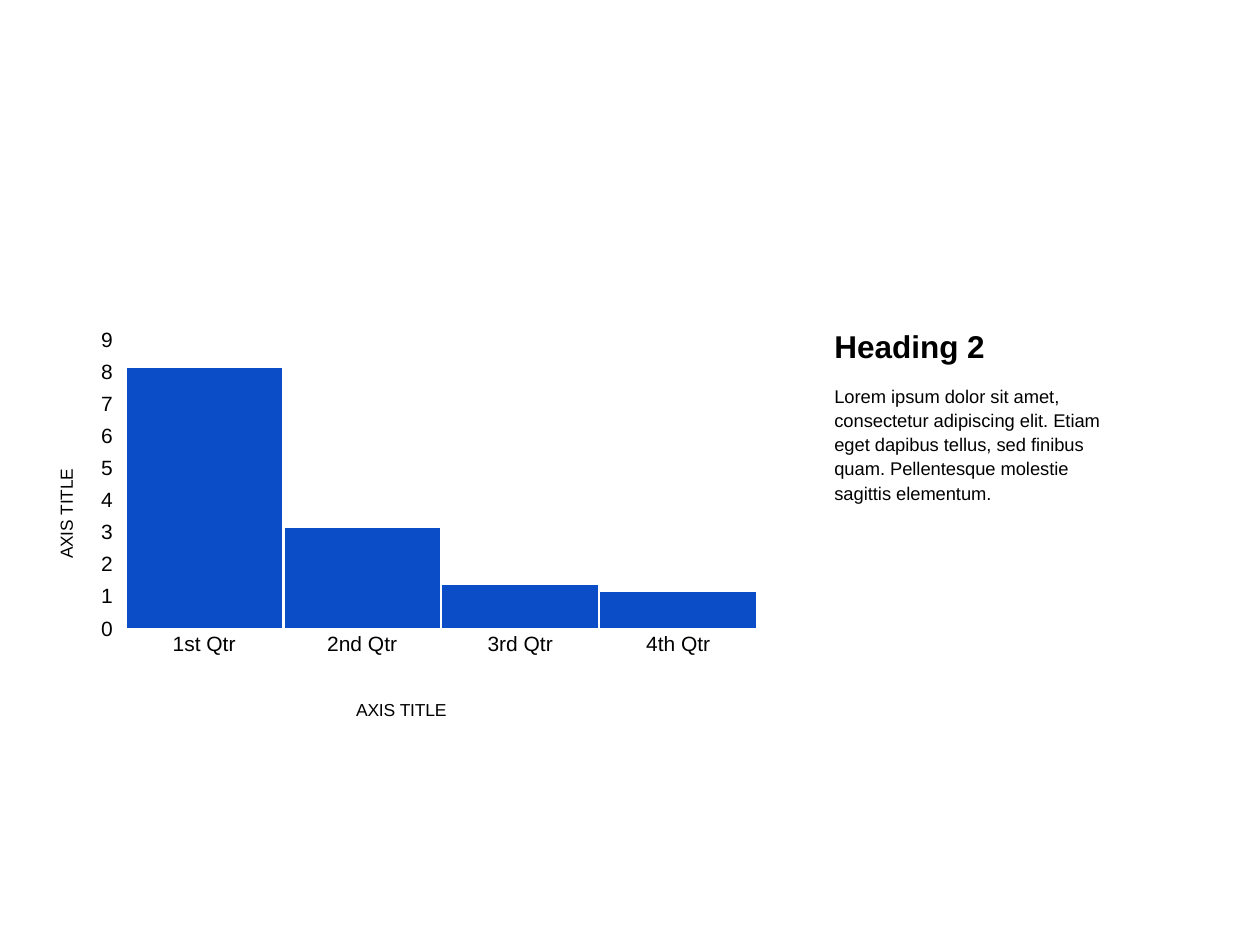
from lxml import etree
from pptx import Presentation
from pptx.chart.data import CategoryChartData
from pptx.dml.color import RGBColor
from pptx.enum.chart import XL_CHART_TYPE, XL_TICK_MARK
from pptx.oxml.ns import qn
from pptx.util import Emu, Pt

PX = 914400 // 126
FONT = "Arial"
BLACK = RGBColor(0x00, 0x00, 0x00)
WHITE = RGBColor(0xFF, 0xFF, 0xFF)
BLUE = RGBColor(0x0B, 0x4D, 0xC7)
GRAY = RGBColor(0xD9, 0xD9, 0xD9)
COLUMN = XL_CHART_TYPE.COLUMN_CLUSTERED
NO_TICK = XL_TICK_MARK.NONE
OUTSIDE = XL_TICK_MARK.OUTSIDE
QUARTERS = ["1st Qtr", "2nd Qtr", "3rd Qtr", "4th Qtr"]
VALUES = [8.2, 3.2, 1.4, 1.2]
BODY = ("Lorem ipsum dolor sit amet, consectetur adipiscing elit. Etiam eget dapibus "
        "tellus, sed finibus quam. Pellentesque molestie sagittis elementum.")


def px(*lengths):
    """Turn pixel lengths into EMU."""
    return [Emu(n * PX) for n in lengths]


def set_font(font, size, bold=False):
    """Apply the common typeface and colour."""
    font.name = FONT
    font.size = Pt(size)
    font.bold = bold
    font.color.rgb = BLACK


def add_text(p, text, size=10, bold=False, line=None, before=None):
    """Write one formatted run into a paragraph."""
    p.line_spacing = line
    if before is not None:
        p.space_before = Pt(before)
    r = p.add_run()
    r.text = text
    set_font(r.font, size, bold)


def set_layout(parent, x, y, w=None, h=None):
    """Place a chart part by fractions of the chart area."""
    layout = parent.get_or_add_layout() if hasattr(parent, "get_or_add_layout") else parent.find(qn("c:layout"))
    if layout is None:
        layout = etree.Element(qn("c:layout"))
        text = parent.find(qn("c:tx"))
        parent.insert(0 if text is None else 1, layout)
    for child in list(layout):
        layout.remove(child)
    manual = etree.SubElement(layout, qn("c:manualLayout"))
    items = [("xMode", "edge"), ("yMode", "edge"), ("x", x), ("y", y)]
    if w is not None:
        items = [("layoutTarget", "inner")] + items + [("w", w), ("h", h)]
    for tag, value in items:
        etree.SubElement(manual, qn(f"c:{tag}")).set("val", str(value))


def style_axis(axis, tick, x, y):
    """Format an axis and place its title."""
    axis.has_major_gridlines = False
    axis.major_tick_mark = tick
    axis.minor_tick_mark = NO_TICK
    set_font(axis.tick_labels.font, 12)
    axis.has_title = True
    title = axis.axis_title
    add_text(title.text_frame.paragraphs[0], "AXIS TITLE")
    set_layout(title._element, x, y)


def add_column_chart(s):
    """Add the quarterly column chart."""
    data = CategoryChartData()
    data.categories = QUARTERS
    data.add_series("Series 1", VALUES)
    chart = s.shapes.add_chart(COLUMN, *px(37, 325, 735, 401), data).chart
    chart.has_legend = False
    chart.has_title = False
    set_font(chart.font, 10)
    plot = chart.plots[0]
    plot.gap_width = 0
    plot.vary_by_categories = False
    series = plot.series[0]
    series.format.fill.solid()
    series.format.fill.fore_color.rgb = BLUE
    series.format.line.color.rgb = WHITE
    series.format.line.width = Pt(1.5)
    style_axis(chart.category_axis, NO_TICK, 0.43, 0.94)
    chart.category_axis.format.line.color.rgb = GRAY
    chart.category_axis.format.line.width = Pt(0.75)
    axis = chart.value_axis
    style_axis(axis, OUTSIDE, 0.02, 0.36)
    axis.format.line.fill.background()
    axis.minimum_scale, axis.maximum_scale, axis.major_unit = 0, 9, 1
    area = chart._chartSpace.find(".//" + qn("c:plotArea"))
    set_layout(area, 0.12, 0.04, 0.86, 0.73)


def add_summary(s):
    """Add the heading and its paragraph."""
    tf = s.shapes.add_textbox(*px(822, 325, 320, 249)).text_frame
    tf.word_wrap = True
    add_text(tf.paragraphs[0], "Heading 2", size=18, bold=True, line=0.9)
    add_text(tf.add_paragraph(), BODY, size=10.5, line=1.1, before=10)


def main():
    """Build and save the slide."""
    prs = Presentation()
    prs.slide_width, prs.slide_height = px(1260, 945)
    s = prs.slides.add_slide(prs.slide_layouts[6])
    add_column_chart(s)
    add_summary(s)
    prs.save("out.pptx")


if __name__ == "__main__":
    main()
